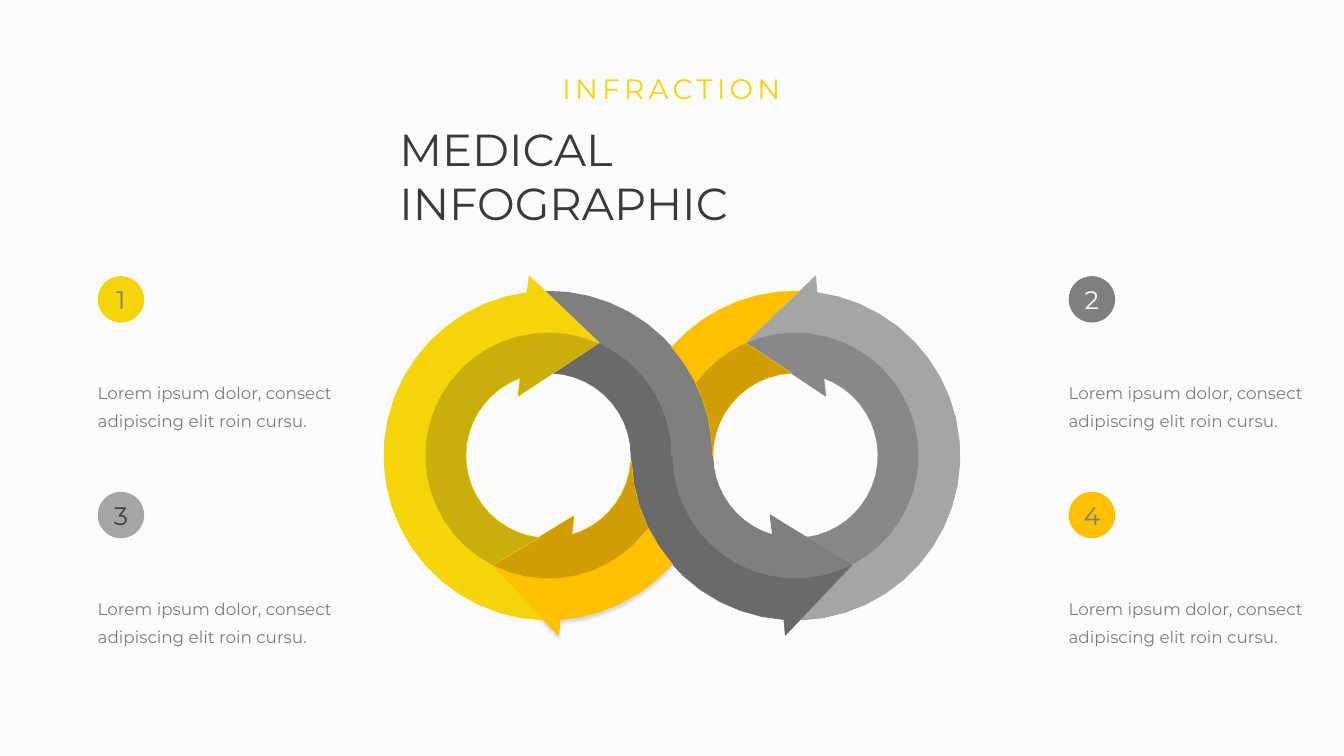
import math

import lxml.etree
import pptx
import pptx.dml.color
import pptx.enum.shapes
import pptx.enum.text
import pptx.oxml.ns
import pptx.util

Inches = pptx.util.Inches
Pt = pptx.util.Pt
FONT = "Montserrat"
COLORS = {
    "background": "FBFBFB",
    "yellow": "F6D40A",
    "orange": "FFC000",
    "dark": "7F7F7F",
    "light": "A5A5A5",
    "shade": "171717",
    "body": "7E7E7E",
    "title": "3A3A3A",
    "number": "3F3F3F",
    "shadow": "000000",
}

LEFT = (5.44, 4.52)
RIGHT = (7.89, 4.52)
OUTER, MIDDLE, INNER = 1.63, 1.22, 0.82
ARC_STEP = 8

DESCRIPTION = ["Lorem ipsum dolor, consect", "adipiscing elit roin cursu."]
STEPS = [
    ("1", 0.87, 2.74, "yellow", "body"),
    ("3", 0.87, 4.88, "light", "number"),
    ("2", 10.5, 2.74, "dark", "background"),
    ("4", 10.5, 4.88, "orange", "body"),
]


def rgb(name):
    return pptx.dml.color.RGBColor.from_string(COLORS[name])


def set_attributes(target, values):
    for name, value in values.items():
        setattr(target, name, value)


def add_xml(parent, tag, **attributes):
    return lxml.etree.SubElement(parent, pptx.oxml.ns.qn(tag), attributes)


def arc(center, radius, start, end):
    count = math.ceil(abs(end - start) / ARC_STEP)
    angles = [math.radians(start + (end - start) * i / count) for i in range(count + 1)]
    return [(center[0] + radius * math.cos(angle), center[1] + radius * math.sin(angle))
            for angle in angles]


def add_outline(shapes, points, color):
    corners = [(Inches(x), Inches(y)) for x, y in points]
    builder = shapes.build_freeform(*corners[0])
    builder.add_line_segments(corners[1:], close=True)
    shape = builder.convert_to_shape()
    shape.shadow.inherit = False
    shape.fill.solid()
    shape.fill.fore_color.rgb = rgb(color)
    return shape


def add_ribbon(shapes, color, points, shade_points):
    ribbon = add_outline(shapes, points, color)
    ribbon.line.color.rgb = rgb(color)
    ribbon.line.width = Pt(0.75)
    shade = add_outline(shapes, shade_points, "shade")
    shade.line.fill.background()
    shade_color = shade._element.spPr.find(".//" + pptx.oxml.ns.qn("a:srgbClr"))
    add_xml(shade_color, "a:alpha", val="20000")
    return ribbon


def add_soft_shadow(shape):
    effects = shape._element.spPr.find(pptx.oxml.ns.qn("a:effectLst"))
    shadow = add_xml(effects, "a:outerShdw", blurRad=str(Pt(2)), dist=str(Pt(2)),
                     dir="5400000", algn="t", rotWithShape="0")
    color = add_xml(shadow, "a:srgbClr", val=COLORS["shadow"])
    add_xml(color, "a:alpha", val="13000")


def add_infinity_loop(slide):
    shapes = slide.shapes.add_group_shape().shapes

    light_inside = [(7.99, 5.32), *arc(RIGHT, INNER, 83, -70), (8.19, 3.93)]
    add_ribbon(
        shapes, "light",
        arc(RIGHT, OUTER, -82.6, 88) + [(8.45, 5.61)] + light_inside
        + [(7.4, 3.4), (8.09, 2.74)],
        arc(RIGHT, MIDDLE, -114, 63) + light_inside)

    dark_tail = [(7.79, 6.3), *arc(RIGHT, OUTER, 94, 180), *arc(LEFT, INNER, 0, -87)]
    add_ribbon(
        shapes, "dark",
        arc(LEFT, OUTER, -91, 0) + arc(RIGHT, INNER, 180, 106)
        + [(7.64, 5.11), (8.45, 5.61)] + dark_tail + [(5.94, 3.39)],
        arc(LEFT, MIDDLE, -66, 0) + arc(RIGHT, MIDDLE, 180, 63) + dark_tail)

    orange_inside = [*arc(RIGHT, INNER, 180, 267), (7.39, 3.4)]
    add_ribbon(
        shapes, "orange",
        arc(RIGHT, OUTER, -89, -139) + arc(LEFT, OUTER, -41, 0) + orange_inside,
        arc(RIGHT, MIDDLE, -114, -144) + arc(LEFT, OUTER, -26, 0) + orange_inside)

    orange_head = [(5.69, 5.12), (5.67, 5.31), *arc(LEFT, INNER, 74, 4)]
    lower_orange = add_ribbon(
        shapes, "orange",
        arc(RIGHT, OUTER, 178, 138.5) + arc(LEFT, OUTER, 42, 86)
        + [(5.54, 6.3), (4.88, 5.62)] + orange_head,
        arc(RIGHT, OUTER, 178, 153.5) + arc(LEFT, MIDDLE, 37, 117) + orange_head)
    add_soft_shadow(lower_orange)

    yellow_inside = [(5.35, 5.33), *arc(LEFT, INNER, 97, 250), (5.14, 3.93)]
    add_ribbon(
        shapes, "yellow",
        arc(LEFT, OUTER, 262.6, 92) + [(4.88, 5.61)] + yellow_inside
        + [(5.94, 3.4), (5.25, 2.74)],
        arc(LEFT, MIDDLE, 294, 117) + yellow_inside)


def write_text(shape, lines, size, color, frame_format, paragraph_format):
    frame = shape.text_frame
    set_attributes(frame, frame_format)
    for index, line in enumerate(lines):
        paragraph = frame.paragraphs[0] if index == 0 else frame.add_paragraph()
        set_attributes(paragraph, paragraph_format)
        run = paragraph.add_run()
        run.text = line
        set_attributes(run.font, {"name": FONT, "size": Pt(size)})
        run.font.color.rgb = rgb(color)


def add_text(slide, box, lines, size, color, wrap, paragraph_format):
    shape = slide.shapes.add_textbox(*map(Inches, box))
    frame_format = {"word_wrap": wrap,
                    "auto_size": pptx.enum.text.MSO_AUTO_SIZE.SHAPE_TO_FIT_TEXT}
    write_text(shape, lines, size, color, frame_format, paragraph_format)
    return shape


def add_step(slide, number, left, top, fill, color):
    add_text(slide, (left, top + 0.93, 2.55, 0.64), DESCRIPTION, 12, "body",
             False, {"line_spacing": 1.4})
    badge = slide.shapes.add_shape(
        pptx.enum.shapes.MSO_SHAPE.OVAL,
        *map(Inches, (left + 0.1, top, 0.46, 0.46)))
    badge.shadow.inherit = False
    badge.fill.solid()
    badge.fill.fore_color.rgb = rgb(fill)
    badge.line.fill.background()
    frame_format = dict.fromkeys(
        ("margin_left", "margin_right", "margin_top", "margin_bottom"), 0)
    frame_format["vertical_anchor"] = pptx.enum.text.MSO_ANCHOR.MIDDLE
    write_text(badge, [number], 18, color, frame_format,
               {"alignment": pptx.enum.text.PP_ALIGN.CENTER})


def add_headings(slide):
    kicker = add_text(slide, (5.48, 0.66, 2.38, 0.44), ["INFRACTION"], 20,
                      "yellow", True, {})
    kicker.text_frame.paragraphs[0].runs[0].font._element.set("spc", "300")
    title = slide.shapes.title
    set_attributes(title, {"left": Inches(3.86), "top": Inches(1.16),
                           "width": Inches(5.62), "height": Inches(0.64)})
    write_text(title, ["MEDICAL INFOGRAPHIC"], 32, "title",
               {"word_wrap": True,
                "auto_size": pptx.enum.text.MSO_AUTO_SIZE.NONE,
                "vertical_anchor": pptx.enum.text.MSO_ANCHOR.TOP},
               {"alignment": pptx.enum.text.PP_ALIGN.LEFT})


def main():
    presentation = pptx.Presentation()
    set_attributes(presentation, {"slide_width": Inches(13.33),
                                  "slide_height": Inches(7.5)})
    slide = presentation.slides.add_slide(presentation.slide_layouts[5])
    slide.background.fill.solid()
    slide.background.fill.fore_color.rgb = rgb("background")
    add_infinity_loop(slide)
    for step in STEPS:
        add_step(slide, *step)
    add_headings(slide)
    presentation.save("out.pptx")


if __name__ == "__main__":
    main()
